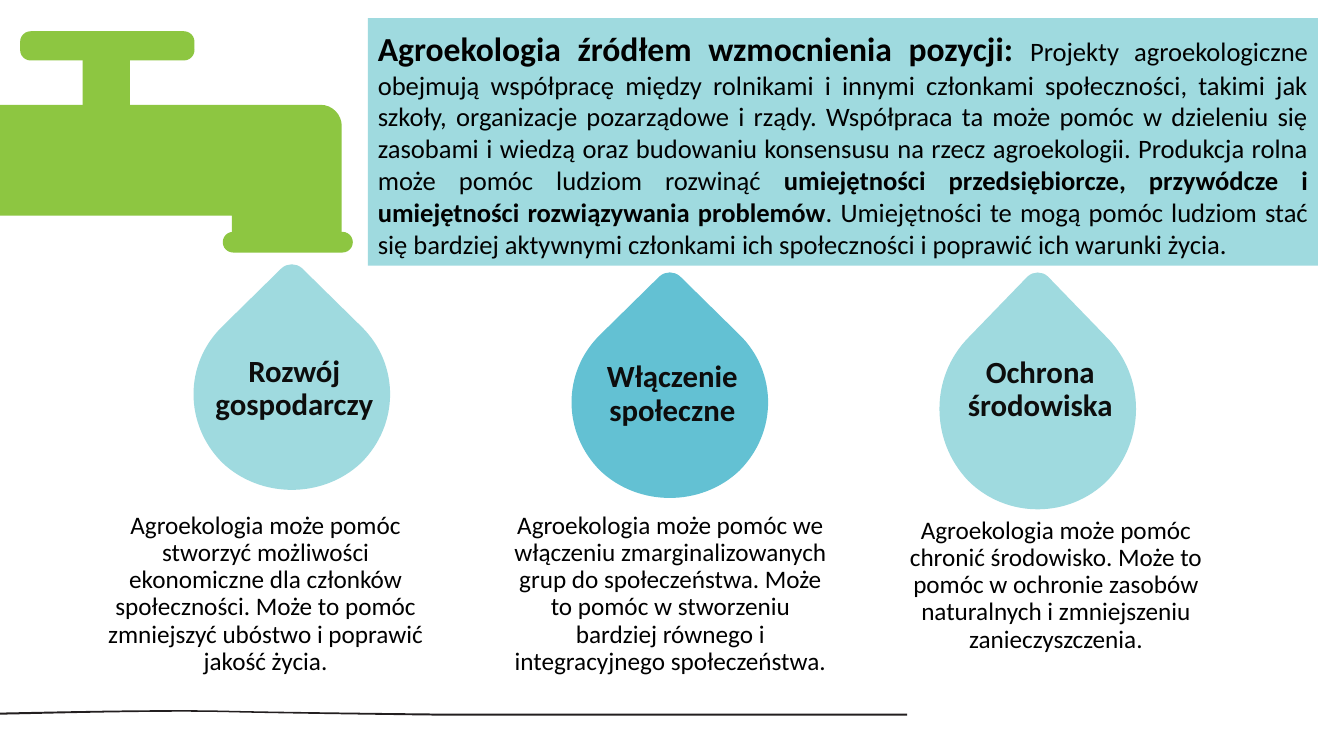
from dataclasses import dataclass
from typing import NamedTuple

import lxml.etree
import pptx
import pptx.dml.color
import pptx.enum.shapes
import pptx.enum.text
import pptx.oxml.ns
import pptx.util

SLIDE_WIDTH = pptx.util.Inches(13.333)
SLIDE_HEIGHT = pptx.util.Inches(7.5)
COLUMNS, ROWS = 133.33, 75

SHAPE = pptx.enum.shapes.MSO_SHAPE
ALIGN = pptx.enum.text.PP_ALIGN


@dataclass(frozen=True)
class Theme:
    font: str = "Calibri"
    tap: str = "8DC641"
    pale: str = "9FDADF"
    deep: str = "63C1D3"
    ground: str = "231F20"
    intro_ink: str = "010101"
    label_ink: str = "0D0D0D"
    body_ink: str = "000000"
    intro_title_size: float = 24
    intro_size: float = 19
    label_size: float = 22
    body_size: float = 18


THEME = Theme()


class Point(NamedTuple):
    column: float
    row: float


class Area(NamedTuple):
    column: float
    row: float
    columns: float
    rows: float


class TapPart(NamedTuple):
    preset: SHAPE
    area: Area
    rounding: float | None = None


class Drop(NamedTuple):
    tip: Point
    stretch: float
    color: str
    label: str
    label_area: Area
    body: str
    body_area: Area


# A step holds one point for a straight edge, three for a Bézier curve.
Step = tuple[Point, ...]

DROP_OUTLINE: list[Step] = [
    (Point(1, 0.5),),
    (Point(0.4, 0), Point(-0.4, 0), Point(-1, 0.5)),
    (Point(-6.9, 6.3),),
    (Point(-10.7, 10), Point(-10.7, 16), Point(-6.9, 19.8)),
    (Point(-3.1, 23.4), Point(3.1, 23.4), Point(6.9, 19.8)),
    (Point(10.7, 16), Point(10.7, 10), Point(6.9, 6.3)),
]
SPOUT_OUTLINE: list[Step] = [
    (Point(0, 10.4),),
    (Point(31.8, 10.4),),
    (Point(33, 10.4), Point(33.9, 11.4), Point(33.9, 12.5)),
    (Point(33.9, 23),),
    (Point(23, 23),),
    (Point(23, 21.4),),
    (Point(0, 21.4),),
]
GROUND_OUTLINE: list[Step] = [
    (Point(90, 71),),
    (Point(44.3, 71),),
    (Point(44.1, 71), Point(28, 70.8), Point(22.3, 70.65)),
    (Point(15.5, 70.5), Point(5.2, 70.8), Point(0, 70.9)),
    (Point(0, 70.7),),
    (Point(5.2, 70.6), Point(15.5, 70.35), Point(22.3, 70.5)),
    (Point(28.1, 70.65), Point(44.1, 70.8), Point(44.3, 70.8)),
    (Point(90, 70.8),),
]

TAP_PARTS = [
    TapPart(SHAPE.ROUNDED_RECTANGLE, Area(22.1, 23, 12.9, 2.05), 0.5),
    TapPart(SHAPE.RECTANGLE, Area(8.2, 5.8, 4.7, 4.8)),
    TapPart(SHAPE.ROUNDED_RECTANGLE, Area(2, 3.1, 17.3, 2.9), 0.36),
]
INTRO_AREA = Area(36.5, 1.8, 94.25, 24.55)
INTRO_TITLE = "Agroekologia źródłem wzmocnienia pozycji: "
INTRO_RUNS = [
    ("Projekty agroekologiczne obejmują współpracę między rolnikami i innymi członkami "
     "społeczności, takimi jak szkoły, organizacje pozarządowe i rządy. Współpraca ta może "
     "pomóc w dzieleniu się zasobami i wiedzą oraz budowaniu konsensusu na rzecz "
     "agroekologii. Produkcja rolna może pomóc ludziom rozwinąć ", False),
    ("umiejętności przedsiębiorcze, przywódcze i umiejętności rozwiązywania problemów", True),
    (". Umiejętności te mogą pomóc ludziom stać się bardziej aktywnymi członkami ich "
     "społeczności i poprawić ich warunki życia.", False),
]
DROPS = [
    Drop(Point(28.95, 26.1), 1, THEME.pale,
         "Rozwój gospodarczy", Area(16.6, 34.8, 25.2, 5.5),
         "Agroekologia może pomóc stworzyć możliwości ekonomiczne dla członków społeczności. "
         "Może to pomóc zmniejszyć ubóstwo i poprawić jakość życia.",
         Area(8.85, 50.35, 35, 15)),
    Drop(Point(66.45, 26.9), 1, THEME.deep,
         "Włączenie społeczne", Area(56.05, 35.35, 21.3, 3.7),
         "Agroekologia może pomóc we włączeniu zmarginalizowanych grup do społeczeństwa. "
         "Może to pomóc w stworzeniu bardziej równego i integracyjnego społeczeństwa.",
         Area(49.4, 50.35, 34.2, 15)),
    Drop(Point(102.95, 26.9), 1.05, THEME.pale,
         "Ochrona środowiska", Area(94.55, 34.9, 17.3, 3.7),
         "Agroekologia może pomóc chronić środowisko. Może to pomóc w ochronie zasobów "
         "naturalnych i zmniejszeniu zanieczyszczenia.",
         Area(87.65, 50.85, 34.2, 15)),
]


def across(columns: float) -> int:
    return round(SLIDE_WIDTH * columns / COLUMNS)


def down(rows: float) -> int:
    return round(SLIDE_HEIGHT * rows / ROWS)


def place(area: Area) -> tuple[int, int, int, int]:
    return across(area.column), down(area.row), across(area.columns), down(area.rows)


def paint(shape, color: str) -> None:
    shape.shadow.inherit = False
    shape.fill.solid()
    shape.fill.fore_color.rgb = pptx.dml.color.RGBColor.from_string(color)
    shape.line.fill.background()


def draw_outline(shapes, outline: list[Step], color: str) -> None:
    """Draw a closed outline, joining each three-point step into one curve."""
    first, *rest = [(across(p.column), down(p.row)) for step in outline for p in step]
    builder = shapes.build_freeform(*first)
    builder.add_line_segments(rest, close=True)
    shape = builder.convert_to_shape()
    edges = iter(list(shape._element.iter(pptx.oxml.ns.qn("a:lnTo"))))
    for step in outline[1:]:
        edge, *others = [next(edges) for _ in step]
        if others:
            curve = lxml.etree.Element(pptx.oxml.ns.qn("a:cubicBezTo"))
            edge.addprevious(curve)
            for control in (edge, *others):
                curve.append(control[0])
                control.getparent().remove(control)
    paint(shape, color)


def write(frame, text: str, *, size: float, color: str, bold: bool = False,
          align: ALIGN = ALIGN.CENTER, spacing: float = 0.9) -> None:
    """Append a formatted run to the frame's paragraph."""
    frame.word_wrap = True
    frame.vertical_anchor = pptx.enum.text.MSO_ANCHOR.TOP
    paragraph = frame.paragraphs[0]
    paragraph.alignment = align
    paragraph.line_spacing = spacing
    run = paragraph.add_run()
    run.text = text
    run.font.name = THEME.font
    run.font.size = pptx.util.Pt(size)
    run.font.bold = bold
    run.font.color.rgb = pptx.dml.color.RGBColor.from_string(color)


def draw_tap(slide) -> None:
    tap = slide.shapes.add_group_shape()
    draw_outline(tap.shapes, SPOUT_OUTLINE, THEME.tap)
    for part in TAP_PARTS:
        shape = tap.shapes.add_shape(part.preset, *place(part.area))
        if part.rounding is not None:
            shape.adjustments[0] = part.rounding
        paint(shape, THEME.tap)


def draw_drop(slide, drop: Drop) -> None:
    outline = [tuple(Point(drop.tip.column + p.column, drop.tip.row + p.row * drop.stretch)
                     for p in step) for step in DROP_OUTLINE]
    draw_outline(slide.shapes, outline, drop.color)
    label = slide.shapes.add_textbox(*place(drop.label_area))
    write(label.text_frame, drop.label, size=THEME.label_size, color=THEME.label_ink, bold=True)
    body = slide.shapes.add_textbox(*place(drop.body_area))
    write(body.text_frame, drop.body, size=THEME.body_size, color=THEME.body_ink)


def draw_intro(slide) -> None:
    panel = slide.shapes.add_shape(SHAPE.RECTANGLE, *place(INTRO_AREA))
    paint(panel, THEME.pale)
    frame = panel.text_frame
    frame.margin_top = frame.margin_bottom = pptx.util.Inches(0.1)
    layout = {"color": THEME.intro_ink, "align": ALIGN.JUSTIFY, "spacing": 1.0}
    write(frame, INTRO_TITLE, size=THEME.intro_title_size, bold=True, **layout)
    for text, bold in INTRO_RUNS:
        write(frame, text, size=THEME.intro_size, bold=bold, **layout)


def main() -> None:
    deck = pptx.Presentation()
    deck.slide_width, deck.slide_height = SLIDE_WIDTH, SLIDE_HEIGHT
    slide = deck.slides.add_slide(deck.slide_layouts[6])
    draw_outline(slide.shapes, GROUND_OUTLINE, THEME.ground)
    draw_tap(slide)
    for drop in DROPS:
        draw_drop(slide, drop)
    draw_intro(slide)
    deck.save("out.pptx")


if __name__ == "__main__":
    main()
